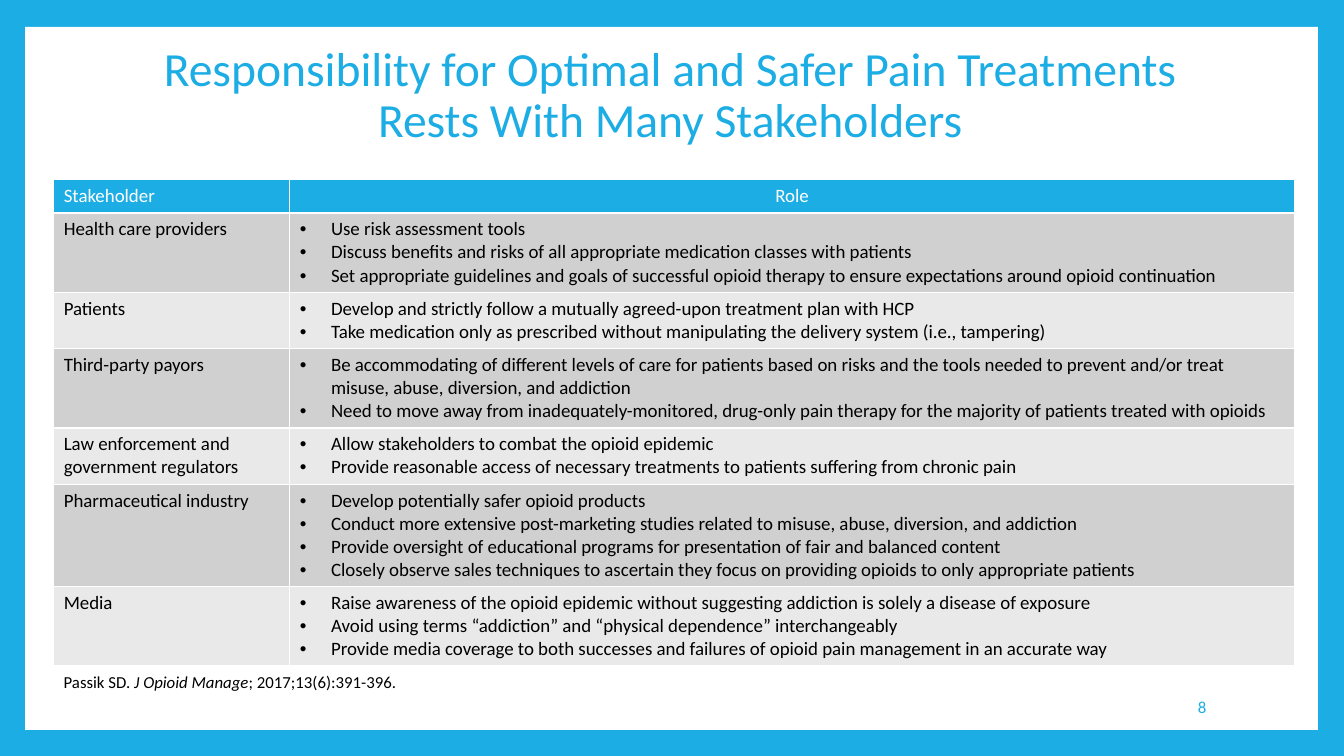
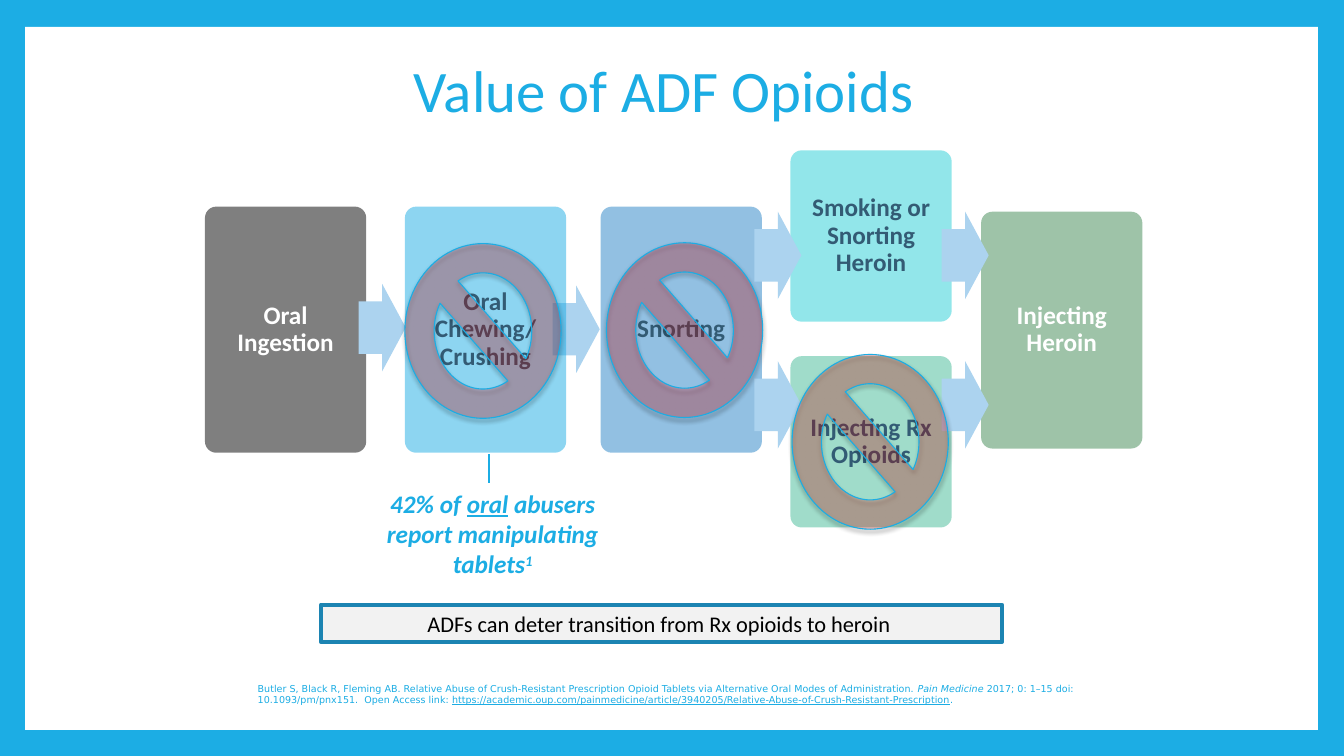
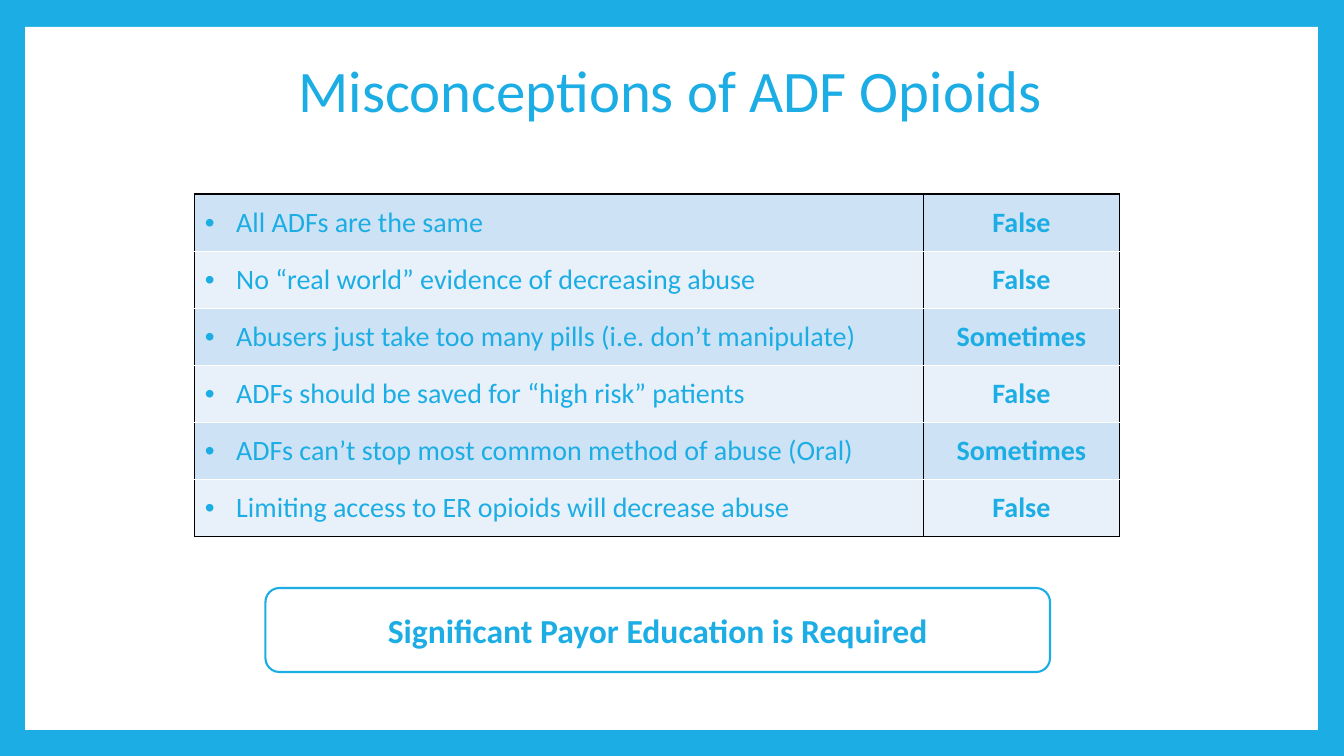
"""Build three slides on opioid stakeholders, abuse-deterrent formulations and misconceptions."""
from lxml.etree import SubElement
from pptx import Presentation
from pptx.dml.color import RGBColor
from pptx.enum.shapes import MSO_CONNECTOR, MSO_SHAPE as Shape
from pptx.enum.text import MSO_ANCHOR as Anchor, PP_ALIGN as Align
from pptx.oxml.ns import qn
from pptx.util import Inches, Pt

COLORS = {
    "sky": "1CADE4", "white": "FFFFFF", "black": "000000", "slate": "335B74",
    "gray_dark": "D0D0D0", "gray_light": "E9E9E9", "ice_dark": "CDE3F5", "ice_light": "E8F1FA",
    "blue": "2683C6", "teal": "27CED7", "mint": "42BA97", "green": "3E8853",
    "arrow": "ACD3EF", "red": "FF0000", "banner": "F2F2F2", "banner_edge": "1C84B2",
}
RGB = {name: RGBColor.from_string(value) for name, value in COLORS.items()}
COLUMNS, ROWS = 160, 90
INDENT = Inches(0.31)

deck = Presentation()
deck.slide_width, deck.slide_height = Inches(13.33), Inches(7.5)
column, row = deck.slide_width / COLUMNS, deck.slide_height / ROWS


def place(left, top, width, height):
    """Turn grid columns and rows into slide lengths."""
    return int(left * column), int(top * row), int(width * column), int(height * row)


def write(frame, lines, size, color="sky", align=Align.LEFT, anchor=Anchor.MIDDLE,
          bold=False, bullet=False, spacing=None, face="Calibri"):
    """Fill a text frame; a line is a string or a list of (text, mark) spans."""
    frame.word_wrap = True
    frame.vertical_anchor = anchor
    for index, line in enumerate(lines):
        para = frame.paragraphs[0] if index == 0 else frame.add_paragraph()
        if bullet:
            props = para._p.get_or_add_pPr()
            props.set("marL", str(INDENT))
            props.set("indent", str(-INDENT))
            SubElement(props, qn("a:buFont"), typeface="Arial")
            SubElement(props, qn("a:buChar"), char="•")
        para.alignment = align
        if spacing:
            para.line_spacing = spacing
        para.font.name, para.font.size, para.font.bold = face, Pt(size), bold
        para.font.color.rgb = RGB[color]
        for text, mark in [(line, "")] if isinstance(line, str) else line:
            span = para.add_run()
            span.text = text
            if "italic" in mark:
                span.font.italic = True
            if "underline" in mark:
                span.font.underline = True
            if "super" in mark:
                span.font._element.set("baseline", "30000")


deck.slide_master.background.fill.solid()
deck.slide_master.background.fill.fore_color.rgb = RGB["sky"]
pages = []
for title, size, top in [
    ("Responsibility for Optimal and Safer Pain Treatments Rests With Many Stakeholders", 34, 2.6),
    ("Value of ADF Opioids ", 42, 2.2),
    ("Misconceptions of ADF Opioids", 42, 2.2),
]:
    page = deck.slides.add_slide(deck.slide_layouts[6])
    panel = page.shapes.add_shape(Shape.RECTANGLE, *place(3, 3.2, 153.9, 83.7))
    panel.shadow.inherit = False
    panel.fill.solid()
    panel.fill.fore_color.rgb = RGB["white"]
    panel.line.fill.background()
    box = page.shapes.add_textbox(*place(15, top, 129.6, 17.8))
    write(box.text_frame, [title], size, align=Align.CENTER, spacing=0.9)
    pages.append(page)
stakeholder_page, value_page, myth_page = pages

stakeholders = [
    ("Stakeholder", ["Role"]),
    ("Health care providers", [
        "Use risk assessment tools",
        "Discuss benefits and risks of all appropriate medication classes with patients",
        "Set appropriate guidelines and goals of successful opioid therapy to ensure expectations "
        "around opioid continuation"]),
    ("Patients", [
        "Develop and strictly follow a mutually agreed-upon treatment plan with HCP",
        "Take medication only as prescribed without manipulating the delivery system "
        "(i.e., tampering)"]),
    ("Third-party payors", [
        "Be accommodating of different levels of care for patients based on risks and the tools "
        "needed to prevent and/or treat misuse, abuse, diversion, and addiction",
        "Need to move away from inadequately-monitored, drug-only pain therapy for the majority "
        "of patients treated with opioids"]),
    ("Law enforcement and government regulators", [
        "Allow stakeholders to combat the opioid epidemic",
        "Provide reasonable access of necessary treatments to patients suffering from chronic pain"]),
    ("Pharmaceutical industry", [
        "Develop potentially safer opioid products",
        "Conduct more extensive post-marketing studies related to misuse, abuse, diversion, "
        "and addiction",
        "Provide oversight of educational programs for presentation of fair and balanced content",
        "Closely observe sales techniques to ascertain they focus on providing opioids to only "
        "appropriate patients"]),
    ("Media", [
        "Raise awareness of the opioid epidemic without suggesting addiction is solely a disease "
        "of exposure",
        "Avoid using terms “addiction” and “physical dependence” interchangeably",
        "Provide media coverage to both successes and failures of opioid pain management in an "
        "accurate way"]),
]
role_heights = [1.2 + 2.75 * count for count in (1, 3, 2, 3, 2, 4, 3)]
myths = [
    ("All ADFs are the same", ["False"]),
    ("No “real world” evidence of decreasing abuse", ["False"]),
    ("Abusers just take too many pills (i.e. don’t manipulate)", ["Sometimes"]),
    ("ADFs should be saved for “high risk” patients", ["False"]),
    ("ADFs can’t stop most common method of abuse (Oral)", ["Sometimes"]),
    ("Limiting access to ER opioids will decrease abuse", ["False"]),
]
plain = {"size": 13.5, "color": "black", "anchor": Anchor.TOP}
header = {**plain, "color": "white"}
centered = {"size": 20, "align": Align.CENTER, "bold": True}
tables = [
    (stakeholder_page, (6.4, 21.4), (28.1, 119.6), role_heights, stakeholders, "white",
     ["sky"] + ["gray_dark", "gray_light"] * 3,
     [(header, {**header, "align": Align.CENTER})] + [(plain, {**plain, "bullet": True})] * 6),
    (myth_page, (23.2, 23.1), (86.7, 23.4), [6.8] * 6, myths, "black",
     ["ice_dark", "ice_light"] * 3, [({"size": 20, "bullet": True}, centered)] * 6),
]
for page, corner, widths, heights, entries, edge, fills, styles in tables:
    area = place(*corner, sum(widths), sum(heights))
    table = page.shapes.add_table(len(entries), 2, *area).table
    table.first_row = table.horz_banding = False
    for number, width in enumerate(widths):
        table.columns[number].width = int(width * column)
    for number, (label, details) in enumerate(entries):
        table.rows[number].height = int(heights[number] * row)
        top_edge = edge if number == 0 else "white"
        bottom_edge = edge if number == len(entries) - 1 else "white"
        for cell, lines, style in zip(table.rows[number].cells, ([label], details), styles[number]):
            props = cell._tc.get_or_add_tcPr()
            for side, color in zip("LRTB", (edge, edge, top_edge, bottom_edge)):
                border = SubElement(props, qn("a:ln" + side), w=str(Pt(1)))
                SubElement(SubElement(border, qn("a:solidFill")), qn("a:srgbClr"), val=COLORS[color])
            cell.fill.solid()
            cell.fill.fore_color.rgb = RGB[fills[number]]
            write(cell.text_frame, lines, **style)
            cell.vertical_anchor = style.get("anchor", Anchor.MIDDLE)

box = stakeholder_page.shapes.add_textbox(*place(122.4, 81.7, 22.4, 4.8))
write(box.text_frame, ["8"], 12, align=Align.RIGHT)
box = stakeholder_page.shapes.add_textbox(*place(6.4, 79.4, 123.2, 3.6))
source = [("Passik SD. ", ""), ("J Opioid Manage", "italic"), ("; 2017;13(6):391-396.", "")]
write(box.text_frame, [source], 12, "black", anchor=Anchor.BOTTOM)

card, arrow, ban = Shape.ROUNDED_RECTANGLE, Shape.RIGHT_ARROW, Shape.NO_SYMBOL
sizes = {card: 19.2, arrow: 5.6, ban: 18.6}
cards = [
    (card, 24.4, 24.6, 29.3, "black", 50, "Oral Ingestion", "white"),
    (card, 71.5, 24.6, 29.3, "blue", 50, "Snorting", "slate"),
    (card, 94.1, 17.9, 20.4, "teal", 50, "Smoking or Snorting Heroin", "slate"),
    (card, 94.1, 42.4, 20.4, "mint", 50, "Injecting Rx Opioids", "slate"),
    (card, 116.8, 25.2, 28.2, "green", 50, "Injecting Heroin", "white"),
]
arrows = [(arrow, left, top, 10.4, "arrow", 100, "", "")
          for left, top in [(42.7, 33.8), (65.8, 34), (89.8, 43), (89.8, 25.2),
                            (112.1, 43), (112.1, 25.2)]]
chewing = (card, 48.2, 24.6, 29.3, "sky", 50, "Oral Chewing/ Crushing", "slate")
bans = [(ban, left, top, 20.8, "red", 22, "", "")
        for left, top in [(48.2, 29), (72.2, 28.9), (94.3, 42.2)]]
for kind, left, top, height, fill, opacity, label, color in cards + arrows + [chewing] + bans:
    part = value_page.shapes.add_shape(kind, *place(left, top, sizes[kind], height))
    part.shadow.inherit = False
    part.fill.solid()
    part.fill.fore_color.rgb = RGB[fill]
    tint = part._element.spPr.find(qn("a:solidFill"))[0]
    SubElement(tint, qn("a:alpha"), val=str(opacity * 1000))
    if kind == ban:
        part.line.color.rgb = RGB["sky"]
        part.line.width = Pt(0.79)
        effects = part._element.spPr.find(qn("a:effectLst"))
        shade = SubElement(effects, qn("a:outerShdw"), blurRad=str(Pt(3)), dist=str(Pt(2)),
                           dir="5400000", rotWithShape="0")
        ink = SubElement(shade, qn("a:srgbClr"), val=COLORS["black"])
        SubElement(ink, qn("a:alpha"), val="45000")
    else:
        part.line.fill.background()
        part.adjustments[0] = 0.07 if kind == card else 0.6
    if label:
        write(part.text_frame, [label], 18, color, Align.CENTER, bold=True, spacing=0.9)

left, top, width, height = place(58.2, 54.1, 0, 3.4)
stem = value_page.shapes.add_connector(MSO_CONNECTOR.STRAIGHT, left, top, left, top + height)
stem.line.color.rgb = RGB["sky"]
stem.line.width = Pt(1.5)
SubElement(stem._element.spPr, qn("a:effectLst"))
box = value_page.shapes.add_textbox(*place(43.1, 57.5, 31.1, 12.1))
finding = [("42% of ", "italic"), ("oral", "italic underline"),
           (" abusers report manipulating tablets", "italic"), ("1", "italic super")]
write(box.text_frame, [finding], 18, align=Align.CENTER, anchor=Anchor.TOP, bold=True)

box = value_page.shapes.add_textbox(*place(29.5, 81, 104, 3.5))
box.text_frame.margin_top = box.text_frame.margin_bottom = Inches(0.04)
citation = [
    ("Butler S, Black R, Fleming AB. Relative Abuse of Crush-Resistant Prescription Opioid Tablets "
     "via Alternative Oral Modes of Administration. ", ""),
    ("Pain Medicine", "italic"),
    (" 2017; 0: 1–15 doi: 10.1093/pm/pnx151.  Open Access link: ", ""),
    ("https://academic.oup.com/painmedicine/article/3940205/"
     "Relative-Abuse-of-Crush-Resistant-Prescription", "underline"),
    (".", ""),
]
write(box.text_frame, [citation], 6.8, anchor=Anchor.BOTTOM, face="DejaVu Sans")

for page, kind, area, fill, edge, weight, text, style in [
    (value_page, Shape.RECTANGLE, (38.2, 72, 81.1, 4.4), "banner", "banner_edge", 3,
     "ADFs can deter transition from Rx opioids to heroin ", {"size": 16, "color": "black"}),
    (myth_page, Shape.ROUNDED_RECTANGLE, (31.6, 70, 93.4, 10), "white", "sky", 1.5,
     "Significant Payor Education is Required", {"size": 24, "bold": True}),
]:
    banner = page.shapes.add_shape(kind, *place(*area))
    banner.shadow.inherit = False
    banner.fill.solid()
    banner.fill.fore_color.rgb = RGB[fill]
    banner.line.color.rgb = RGB[edge]
    banner.line.width = Pt(weight)
    write(banner.text_frame, [text], align=Align.CENTER, **style)

deck.save("out.pptx")
